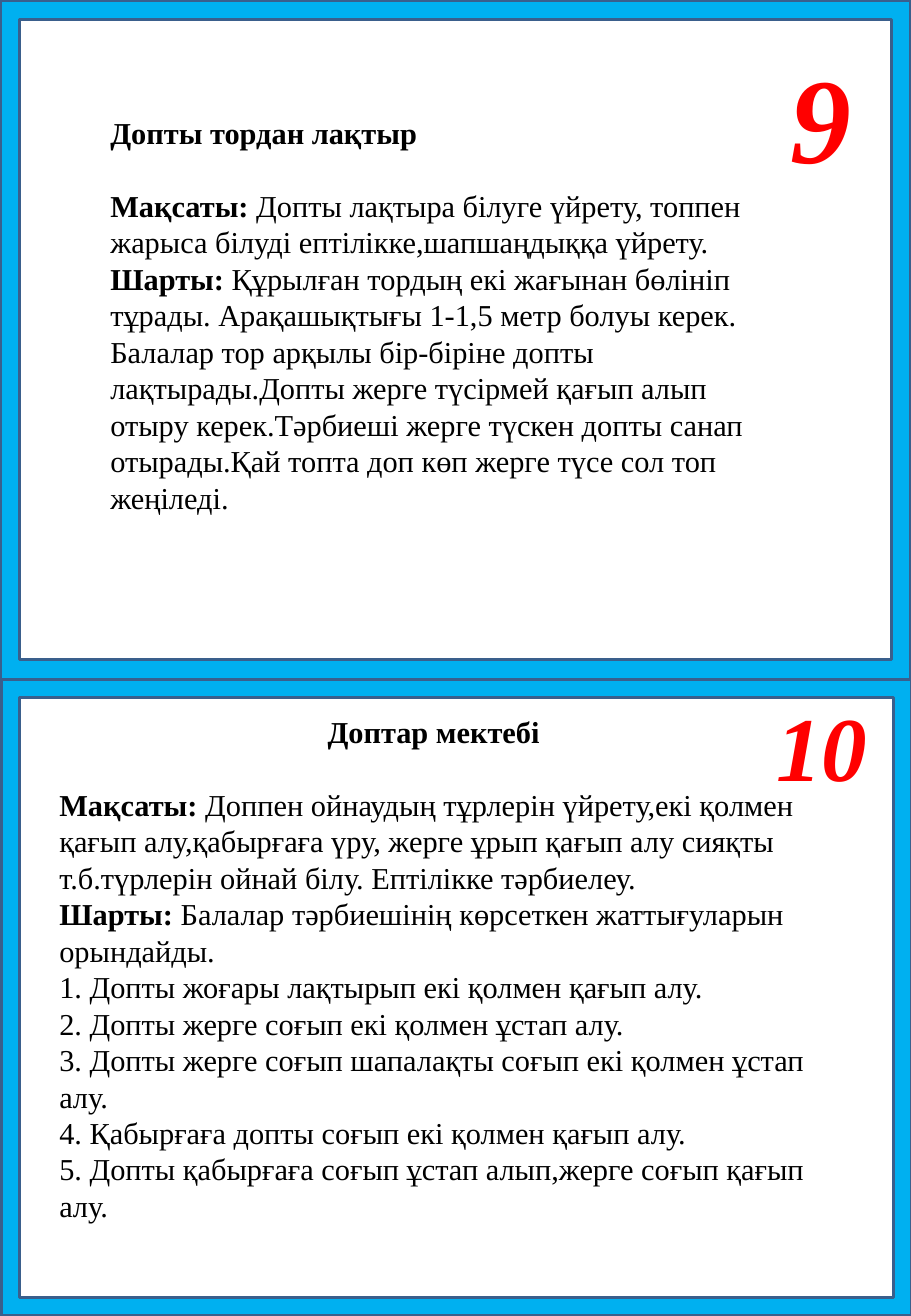
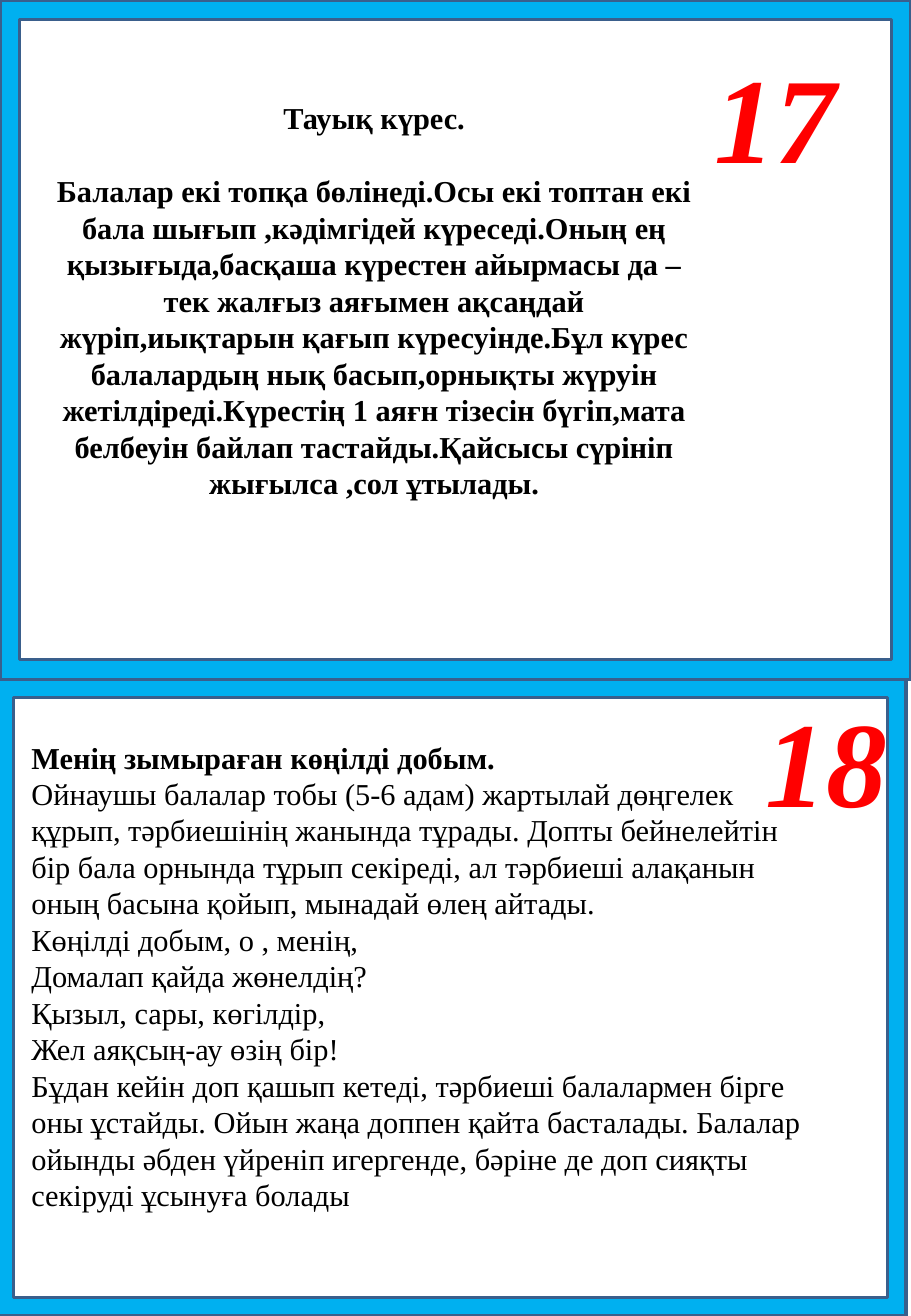
from pptx import Presentation
from pptx.dml.color import RGBColor
from pptx.enum.shapes import MSO_SHAPE
from pptx.enum.text import PP_ALIGN
from pptx.util import Inches, Pt

FRAME = MSO_SHAPE.FRAME
LEFT, MID = PP_ALIGN.LEFT, PP_ALIGN.CENTER


class Theme:
    font = "Times New Roman"
    ink = RGBColor(0, 0, 0)
    red = RGBColor(0xFF, 0, 0)
    sky = RGBColor(0, 0xB0, 0xF0)
    edge = RGBColor(0x3A, 0x5F, 0x8C)
    body = 18
    gap = 21.6
    line = 2
    rim = 0.029


WIDE, HIGH, SPLIT = 7.5, 10.83, 5.59

# Each card: frame left, number (text, size, box), text box, title, title and
# body alignment, gap after the title, body paragraphs as (bold part, plain part).
SLIDES = [
    [
        dict(
            left=0, num=("9", 72, (6.23, 0.3, 1.06, 1.31)),
            box=(0.81, 0.89, 5.42, 3.43),
            title="Допты тордан лақтыр", align=(LEFT, LEFT), gap=True,
            body=[
                ("Мақсаты:", " Допты лақтыра білуге үйрету, топпен жарыса "
                 "білуді ептілікке,шапшаңдыққа үйрету."),
                ("Шарты:", " Құрылған тордың екі жағынан бөлініп тұрады. "
                 "Арақашықтығы 1-1,5 метр болуы керек. Балалар тор арқылы "
                 "бір-біріне допты лақтырады.Допты жерге түсірмей қағып алып "
                 "отыру керек.Тәрбиеші жерге түскен допты санап отырады."
                 "Қай топта доп көп жерге түсе сол топ жеңіледі."),
            ],
        ),
        dict(
            left=0.01, num=("10", 54, (6.02, 5.63, 1.49, 1.01)),
            box=(0.39, 5.82, 6.36, 4.34),
            title="Доптар мектебі", align=(MID, LEFT), gap=True,
            body=[
                ("Мақсаты:", " Доппен ойнаудың тұрлерін үйрету,екі қолмен "
                 "қағып алу,қабырғаға үру, жерге ұрып қағып алу сияқты "
                 "т.б.түрлерін ойнай білу. Ептілікке тәрбиелеу."),
                ("Шарты:", " Балалар тәрбиешінің көрсеткен жаттығуларын "
                 "орындайды."),
                ("", "1. Допты жоғары лақтырып екі қолмен қағып алу."),
                ("", "2. Допты жерге соғып екі қолмен ұстап алу."),
                ("", "3. Допты жерге соғып шапалақты соғып екі қолмен "
                 "ұстап алу."),
                ("", "4. Қабырғаға допты соғып екі қолмен қағып алу."),
                ("", "5. Допты қабырғаға соғып ұстап алып,жерге соғып "
                 "қағып алу."),
            ],
        ),
    ],
    [
        dict(
            left=0, num=("17", 72, (5.48, 0.3, 1.81, 1.28)),
            box=(0.29, 0.77, 5.58, 3.31),
            title="Тауық күрес.", align=(MID, MID), gap=True,
            body=[
                ("Балалар екі топқа бөлінеді.Осы екі топтан екі бала шығып "
                 ",кәдімгідей күреседі.Оның ең қызығыда,басқаша күрестен "
                 "айырмасы да –тек жалғыз аяғымен ақсаңдай жүріп,иықтарын "
                 "қағып күресуінде.Бұл күрес балалардың нық басып,орнықты "
                 "жүруін жетілдіреді.Күрестің 1 аяғн тізесін бүгіп,мата "
                 "белбеуін байлап тастайды.Қайсысы сүрініп жығылса ,сол "
                 "ұтылады.", ""),
            ],
        ),
        dict(
            left=-0.04, num=("18", 72, (6.02, 5.6, 1.57, 1.28)),
            box=(0.16, 6.03, 6.61, 4.18),
            title="Менің зымыраған көңілді добым.", align=(LEFT, LEFT),
            gap=False,
            body=[
                ("", "Ойнаушы балалар тобы (5-6 адам) жартылай дөңгелек "
                 "құрып, тәрбиешінің жанында тұрады. Допты бейнелейтін бір "
                 "бала орнында тұрып секіреді, ал тәрбиеші алақанын оның "
                 "басына қойып, мынадай өлең айтады."),
                ("", "Көңілді добым, о , менің,"),
                ("", "Домалап қайда жөнелдің?"),
                ("", "Қызыл, сары, көгілдір,"),
                ("", "Жел аяқсың-ау өзің бір!"),
                ("", "Бұдан кейін доп қашып кетеді, тәрбиеші балалармен "
                 "бірге оны ұстайды. Ойын жаңа доппен қайта басталады. "
                 "Балалар ойынды әбден үйреніп игергенде, бәріне де доп "
                 "сияқты секіруді ұсынуға болады"),
            ],
        ),
    ],
]


def add_frame(slide, left, top, high):
    shape = slide.shapes.add_shape(
        FRAME, Inches(left), Inches(top), Inches(WIDE), Inches(high))
    shape.adjustments[0] = Theme.rim
    shape.shadow.inherit = False
    shape.fill.solid()
    shape.fill.fore_color.rgb = Theme.sky
    shape.line.color.rgb = Theme.edge
    shape.line.width = Pt(Theme.line)


def add_text(slide, box, paras, size, color, italic=False):
    """Write paragraphs given as (alignment, space after, bold, plain)."""
    frame = slide.shapes.add_textbox(*map(Inches, box)).text_frame
    frame.word_wrap = True
    for i, (align, after, bold, plain) in enumerate(paras):
        para = frame.add_paragraph() if i else frame.paragraphs[0]
        para.alignment = align
        para.space_after = Pt(after)
        font = para.font
        font.name, font.size, font.italic = Theme.font, Pt(size), italic
        font.color.rgb = color
        for text, heavy in ((bold, True), (plain, False)):
            if text:
                run = para.add_run()
                run.text = text
                run.font.bold = heavy


def add_card(slide, card, top, high):
    add_frame(slide, card["left"], top, high)
    head, body = card["align"]
    paras = [(head, Theme.gap if card["gap"] else 0, card["title"], "")]
    paras += [(body, 0, bold, plain) for bold, plain in card["body"]]
    add_text(slide, card["box"], paras, Theme.body, Theme.ink)
    num, size, box = card["num"]
    add_text(slide, box, [(MID, 0, num, "")], size, Theme.red, italic=True)


def main():
    deck = Presentation()
    deck.slide_width, deck.slide_height = Inches(WIDE), Inches(HIGH)
    rows = ((0, SPLIT), (SPLIT, HIGH - SPLIT))
    for cards in SLIDES:
        slide = deck.slides.add_slide(deck.slide_layouts[6])
        for card, (top, high) in zip(cards, rows):
            add_card(slide, card, top, high)
    deck.save("out.pptx")


if __name__ == "__main__":
    main()
